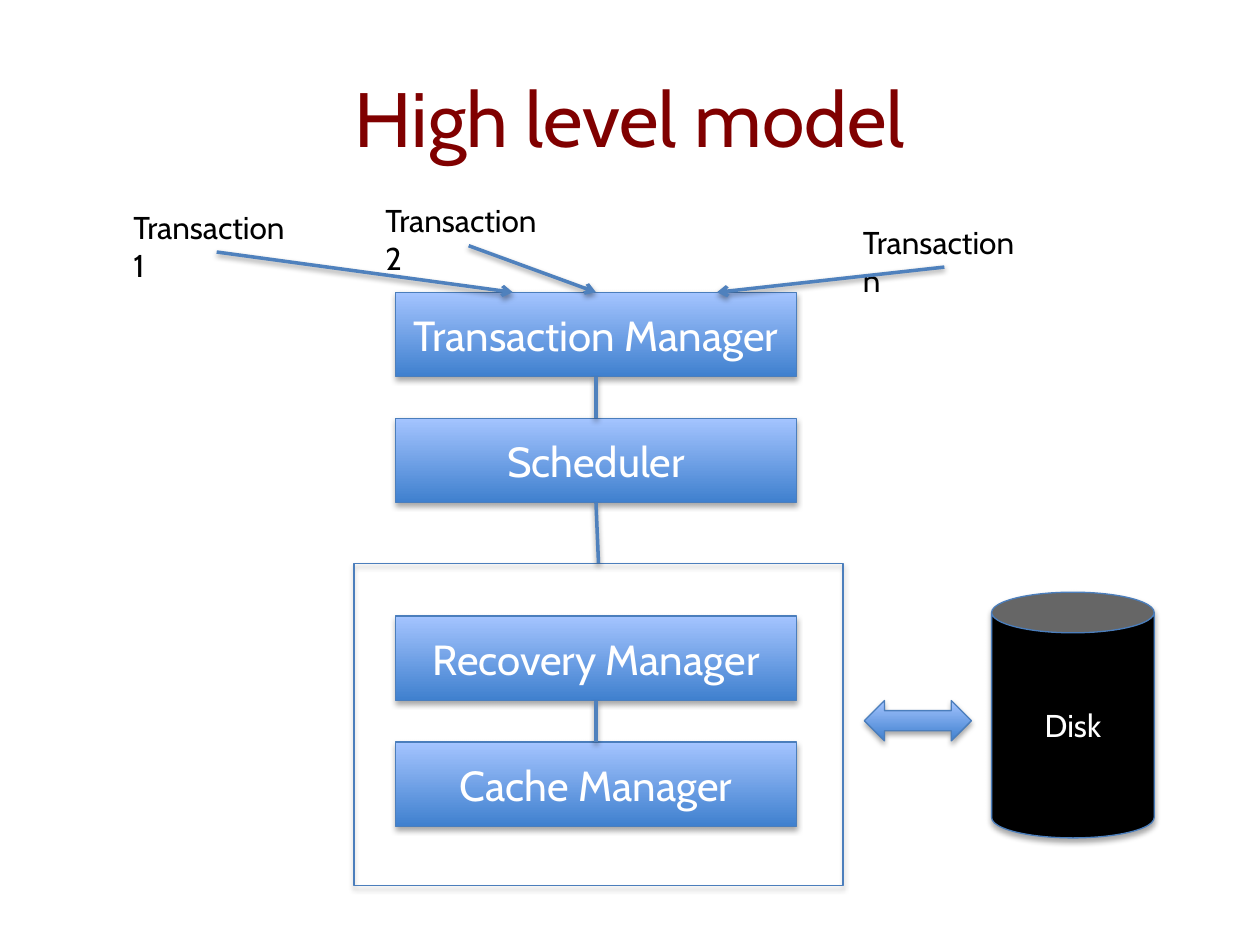
from lxml import etree
from pptx import Presentation
from pptx.dml.color import RGBColor
from pptx.enum.shapes import MSO_CONNECTOR, MSO_SHAPE
from pptx.enum.text import MSO_ANCHOR, MSO_AUTO_SIZE, PP_ALIGN
from pptx.oxml.ns import qn
from pptx.util import Inches, Pt

RECTANGLE = MSO_SHAPE.RECTANGLE
CAN = MSO_SHAPE.CAN
DOUBLE_ARROW = MSO_SHAPE.LEFT_RIGHT_ARROW
STRAIGHT = MSO_CONNECTOR.STRAIGHT
MIDDLE = MSO_ANCHOR.MIDDLE
FIT_TEXT = MSO_AUTO_SIZE.SHAPE_TO_FIT_TEXT
LEFT, CENTER = PP_ALIGN.LEFT, PP_ALIGN.CENTER
TOP_SIDE, BOTTOM_SIDE = 0, 2

FONT = "Cabin"
MAROON = RGBColor(0x80, 0x00, 0x00)
BLACK = RGBColor(0x00, 0x00, 0x00)
WHITE = RGBColor(0xFF, 0xFF, 0xFF)
DEEP_BLUE = RGBColor(0x3F, 0x80, 0xCE)
PALE_BLUE = RGBColor(0xA4, 0xC4, 0xFF)
OUTLINE = RGBColor(0x4B, 0x7E, 0xBC)
LINK_BLUE = RGBColor(0x4F, 0x81, 0xBD)

BOX_LEFT, BOX_WIDTH, BOX_HEIGHT = 3.14, 3.18, 0.67
MANAGERS = [
    ("Transaction Manager", 2.32),
    ("Scheduler", 3.32),
    ("Recovery Manager", 4.89),
    ("Cache Manager", 5.89),
]
TRANSACTIONS = [
    ("Transaction 1", 0.96, 1.6, 1.52, 4.07),
    ("Transaction 2", 2.96, 1.55, 1.52, None),
    ("Transaction n", 6.75, 1.72, 1.49, 5.69),
]


def add_shadow(effects, opacity, distance):
    shadow = etree.SubElement(
        effects, qn("a:outerShdw"), blurRad=str(Pt(3.15)),
        dist=str(Pt(distance)), dir="5400000", rotWithShape="0")
    color = etree.SubElement(shadow, qn("a:srgbClr"), val=str(BLACK))
    etree.SubElement(color, qn("a:alpha"), val=str(opacity * 1000))


def write(shape, text, size, color, align):
    para = shape.text_frame.paragraphs[0]
    para.text = text
    para.alignment = align
    para.font.name = FONT
    para.font.size = Pt(size)
    para.font.color.rgb = color


def add_text(page, text, bounds, size, color, align):
    box = page.shapes.add_textbox(*map(Inches, bounds))
    write(box, text, size, color, align)
    return box


def add_title(page, text):
    title = add_text(page, text, (0.5, 0.3, 9, 1.25), 44, MAROON, CENTER)
    title.text_frame.word_wrap = True
    title.text_frame.vertical_anchor = MIDDLE


def add_label(page, text, bounds):
    label = add_text(page, text, bounds, 18, BLACK, LEFT)
    label.text_frame.word_wrap = False
    label.text_frame.auto_size = FIT_TEXT
    return label


def add_outlined(page, kind, bounds):
    shape = page.shapes.add_shape(kind, *map(Inches, bounds))
    shape.line.color.rgb = OUTLINE
    shape.line.width = Pt(0.75)
    shape.shadow.inherit = False
    add_shadow(shape.element.spPr.find(qn("a:effectLst")), 35, 1.8)
    shape.text_frame.vertical_anchor = MIDDLE
    return shape


def add_gradient(page, kind, bounds):
    shape = add_outlined(page, kind, bounds)
    shape.fill.gradient()
    shape.fill.gradient_angle = 90
    for stop, color in zip(shape.fill.gradient_stops, (DEEP_BLUE, PALE_BLUE)):
        stop.color.rgb = color
    return shape


def add_manager(page, text, top):
    box = add_gradient(page, RECTANGLE, (BOX_LEFT, top, BOX_WIDTH, BOX_HEIGHT))
    write(box, text, 24, WHITE, CENTER)
    return box


def add_disk(page):
    disk = add_outlined(page, CAN, (7.87, 4.7, 1.29, 1.95))
    disk.fill.solid()
    disk.fill.fore_color.rgb = BLACK
    write(disk, "Disk", 18, WHITE, CENTER)


def add_link(page, upper, lower, end_x=None, arrow=False):
    end = Inches(end_x or 0)
    link = page.shapes.add_connector(STRAIGHT, end, lower.top, end, lower.top)
    link.begin_connect(upper, BOTTOM_SIDE)
    if end_x is None:
        link.end_connect(lower, TOP_SIDE)
    link.line.color.rgb = LINK_BLUE
    link.line.width = Pt(2)
    properties = link.element.spPr
    if arrow:
        etree.SubElement(properties.find(qn("a:ln")), qn("a:tailEnd"), type="arrow")
    add_shadow(etree.SubElement(properties, qn("a:effectLst")), 38, 1.6)


def main():
    deck = Presentation()
    deck.slide_width, deck.slide_height = Inches(10), Inches(7.5)
    page = deck.slides.add_slide(deck.slide_layouts[6])

    add_title(page, "High level model")
    transaction, scheduler, recovery, cache = [
        add_manager(page, text, top) for text, top in MANAGERS]
    add_disk(page)
    storage = add_outlined(page, RECTANGLE, (2.81, 4.47, 3.88, 2.56))
    storage.fill.background()
    add_gradient(page, DOUBLE_ARROW, (6.86, 5.56, 0.85, 0.32))

    for text, left, top, width, end_x in TRANSACTIONS:
        label = add_label(page, text, (left, top, width, 0.4))
        add_link(page, label, transaction, end_x, arrow=True)
    for upper, lower in ((transaction, scheduler), (scheduler, storage), (recovery, cache)):
        add_link(page, upper, lower)

    deck.save("out.pptx")


if __name__ == "__main__":
    main()
